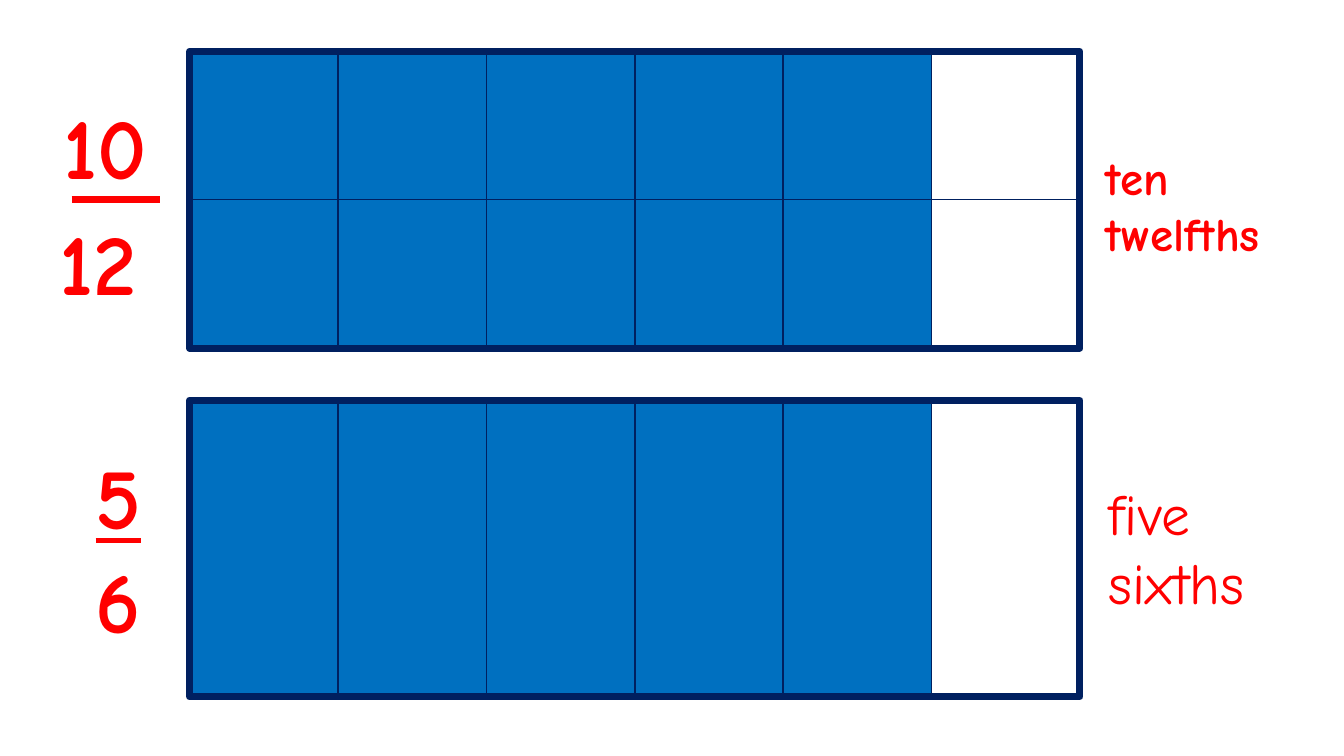
import itertools

import pptx
import pptx.dml.color
import pptx.enum.shapes
import pptx.enum.text
import pptx.oxml.ns
import pptx.util
from pptx.util import Inches

RED, BLUE, NAVY = "FF0000", "0070C0", "002060"
FONT = "Comic Neue"
LEFT, CELL, COLS, SHADED = 1.88, 1.472, 6, 5
HEIGHT = 2 * CELL


def paint(color, code):
    """Set a colour from a hex string."""
    color.rgb = pptx.dml.color.RGBColor.from_string(code)


def add_box(slide, x, y, w, h, fill=None, line=None, width=1):
    """Add a rectangle with an optional fill and outline."""
    box = slide.shapes.add_shape(
        pptx.enum.shapes.MSO_SHAPE.RECTANGLE,
        Inches(x), Inches(y), Inches(w), Inches(h))
    box.shadow.inherit = False
    if fill:
        box.fill.solid()
        paint(box.fill.fore_color, fill)
    else:
        box.fill.background()
    if line:
        paint(box.line.color, line)
        box.line.width = pptx.util.Pt(width)
    else:
        box.line.fill.background()


def add_model(slide, top, rows):
    """Add a bar split into equal cells, all but the last column shaded."""
    high = HEIGHT / rows
    grid = list(itertools.product(range(rows), range(COLS)))
    for row, col in grid:
        if col < SHADED:
            add_box(slide, LEFT + col * CELL, top + row * high, CELL, high, fill=BLUE)
    add_box(slide, LEFT, top, COLS * CELL, HEIGHT, line=NAVY, width=5)
    for row, col in grid:
        add_box(slide, LEFT + col * CELL, top + row * high, CELL, high, line=NAVY)


def add_text(slide, x, y, w, h, lines, size, bold=True, wrap=False):
    """Add red text, one paragraph for each (text, underline) pair."""
    box = slide.shapes.add_textbox(Inches(x), Inches(y), Inches(w), Inches(h))
    frame = box.text_frame
    frame.word_wrap = wrap
    frame.auto_size = pptx.enum.text.MSO_AUTO_SIZE.SHAPE_TO_FIT_TEXT
    for index, (text, under) in enumerate(lines):
        para = frame.add_paragraph() if index else frame.paragraphs[0]
        run = para.add_run()
        run.text = text
        run.font.name = FONT
        run.font.size = pptx.util.Pt(size)
        run.font.bold = bold
        run.font.underline = under
        paint(run.font.color, RED)


def add_rule(slide, x, y, w):
    """Add the red bar of a fraction."""
    rule = slide.shapes.add_connector(
        pptx.enum.shapes.MSO_CONNECTOR.STRAIGHT,
        Inches(x), Inches(y), Inches(x + w), Inches(y))
    paint(rule.line.color, RED)
    rule.line.width = pptx.util.Pt(5)
    props = rule._element.spPr
    props.append(props.makeelement(pptx.oxml.ns.qn("a:effectLst"), {}))


def main():
    """Build the slide and save it."""
    deck = pptx.Presentation()
    deck.slide_width, deck.slide_height = Inches(13.33), Inches(7.5)
    slide = deck.slides.add_slide(deck.slide_layouts[6])

    add_model(slide, 0.51, 2)
    add_rule(slide, 0.71, 1.98, 0.88)
    add_text(slide, 0.49, 2.03, 1.26, 1.14, [("12", False)], 61.7)
    add_text(slide, 0.53, 0.87, 1.26, 1.14, [("10", False)], 61.7)
    add_text(slide, 10.87, 1.42, 2.46, 1.23, [("ten twelfths", False)], 33.6, wrap=True)

    add_model(slide, 3.97, 1)
    add_text(slide, 0.85, 4.35, 0.73, 2.18, [("5", True), ("6", False)], 61.7)
    add_text(slide, 10.9, 4.69, 2.13, 1.49, [("five sixths", False)], 41.1,
             bold=False, wrap=True)
    deck.save("out.pptx")


if __name__ == "__main__":
    main()
